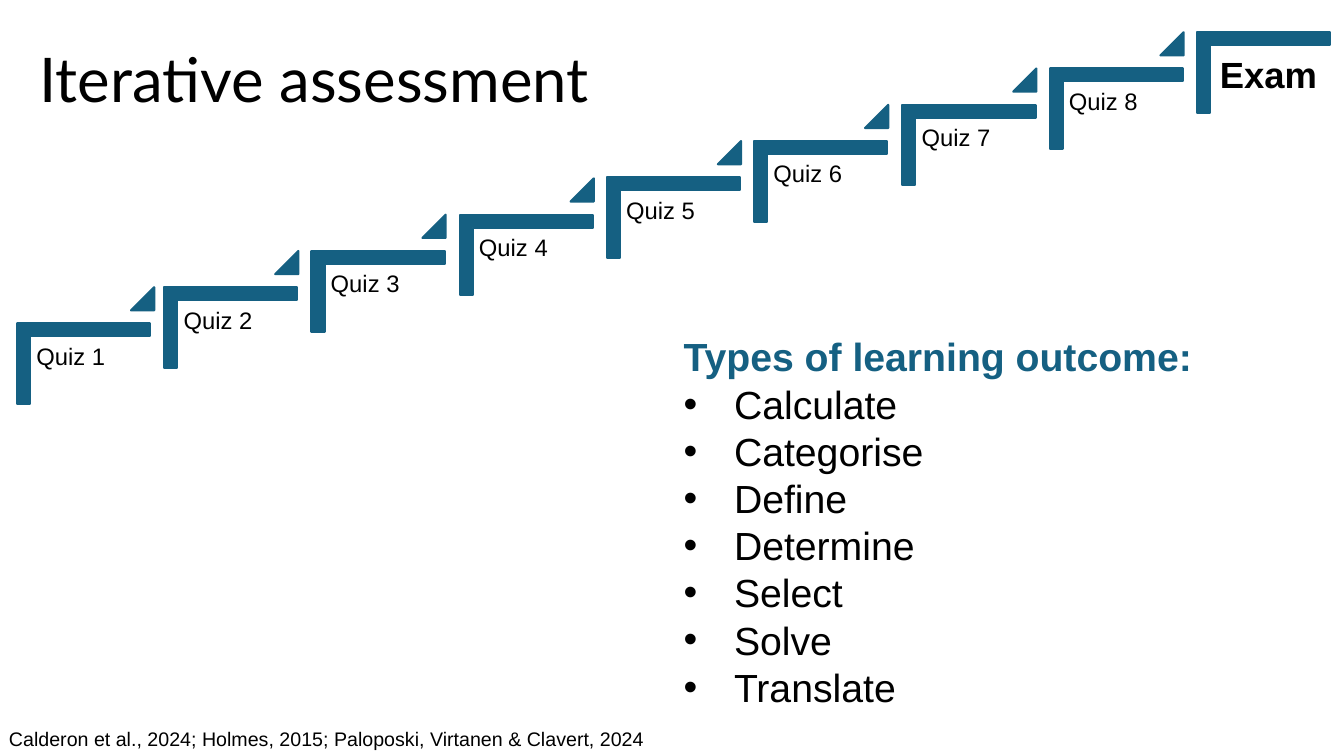
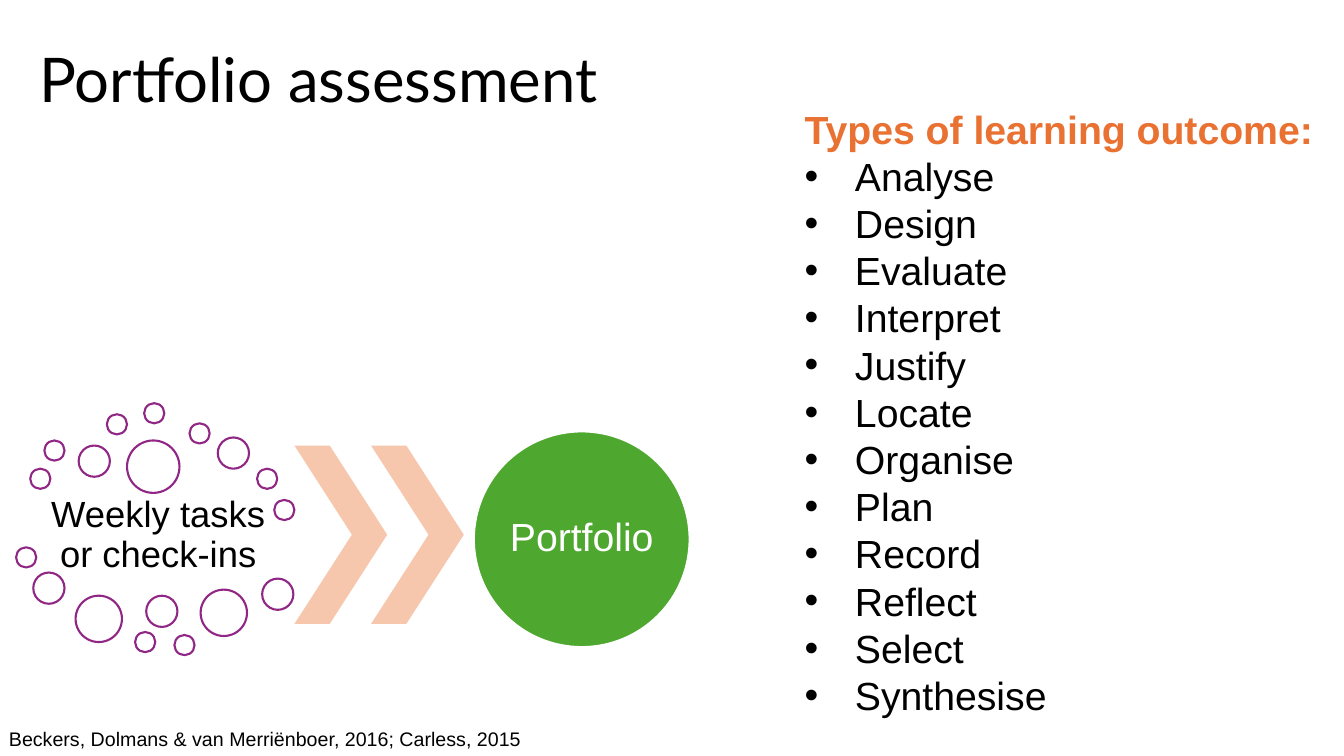
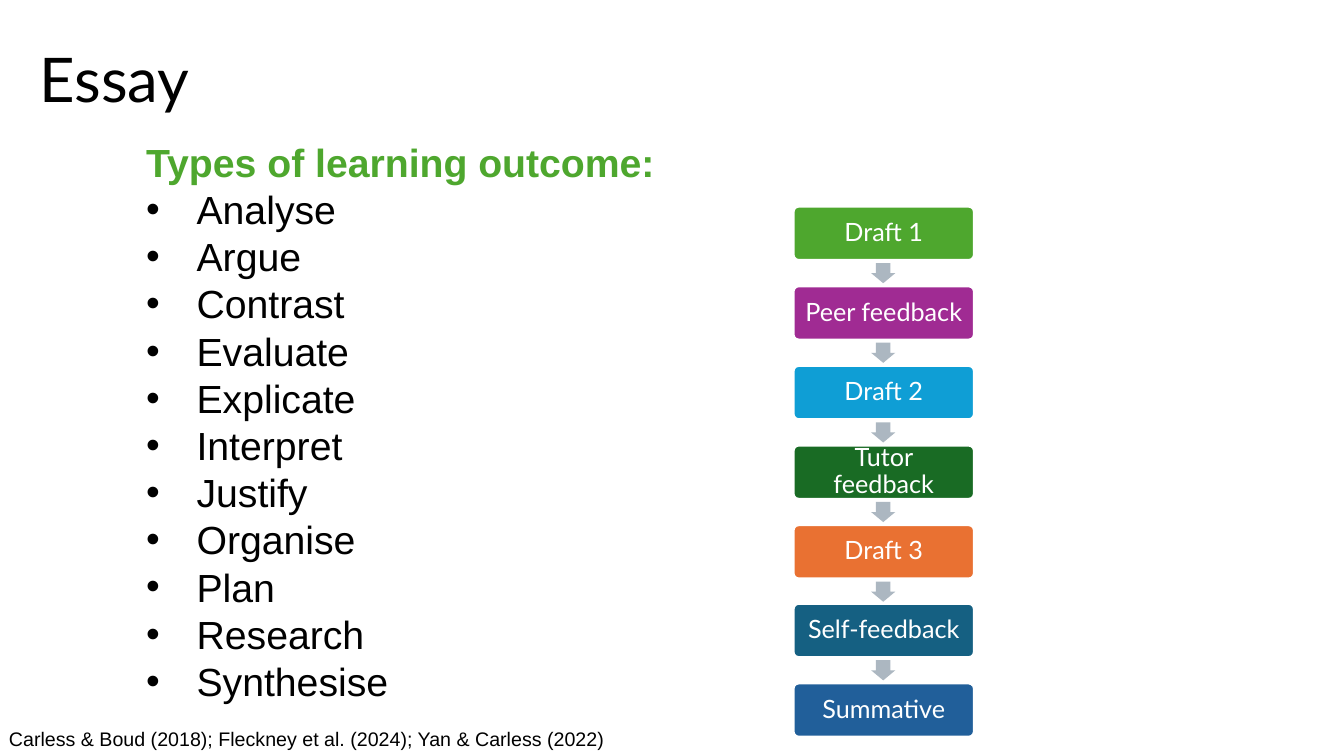
"""Three slides on types of assessment and the learning outcomes they suit."""
from pptx import Presentation
from pptx.dml.color import RGBColor
from pptx.enum.shapes import MSO_SHAPE
from pptx.enum.text import MSO_ANCHOR, MSO_AUTO_SIZE, PP_ALIGN
from pptx.util import Emu, Pt

PX = 9144
BLACK = RGBColor(0x00, 0x00, 0x00)
WHITE = RGBColor(0xFF, 0xFF, 0xFF)
TEAL = RGBColor(0x15, 0x60, 0x82)
ORANGE = RGBColor(0xE9, 0x71, 0x32)
PEACH = RGBColor(0xF6, 0xC6, 0xAD)
GREEN = RGBColor(0x4E, 0xA7, 0x2E)
DARK_GREEN = RGBColor(0x19, 0x6B, 0x24)
PURPLE = RGBColor(0xA0, 0x2B, 0x93)
PLUM = RGBColor(0x91, 0x27, 0x85)
SKY = RGBColor(0x0F, 0x9E, 0xD5)
BLUE = RGBColor(0x21, 0x5F, 0x9A)
GREY = RGBColor(0xAC, 0xB7, 0xC1)

SLIDES = [
    ("Iterative assessment", TEAL, (668, 325, 582, 387),
     ["Calculate", "Categorise", "Define", "Determine", "Select", "Solve", "Translate"],
     "Calderon et al., 2024; Holmes, 2015; Paloposki, Virtanen & Clavert, 2024"),
    ("Portfolio assessment", ORANGE, (788, 99, 531, 623),
     ["Analyse", "Design", "Evaluate", "Interpret", "Justify", "Locate", "Organise",
      "Plan", "Record", "Reflect", "Select", "Synthesise"],
     "Beckers, Dolmans & van Merriënboer, 2016; Carless, 2015"),
    ("Essay", GREEN, (135, 132, 531, 576),
     ["Analyse", "Argue", "Contrast", "Evaluate", "Explicate", "Interpret", "Justify",
      "Organise", "Plan", "Research", "Synthesise"],
     "Carless & Boud (2018); Fleckney et al. (2024); Yan & Carless (2022)"),
]


def add_figure(page, kind, box, fill, line=None, adjustments=()):
    """Add a flat preset shape."""
    shape = page.shapes.add_shape(kind, *[Emu(length * PX) for length in box])
    shape.shadow.inherit = False
    shape.fill.solid()
    shape.fill.fore_color.rgb = fill
    if line is None:
        shape.line.fill.background()
    else:
        shape.line.color.rgb = line
        shape.line.width = Pt(1.5)
    for index, value in enumerate(adjustments):
        shape.adjustments[index] = value
    return shape


def write(shape, text, size, color=BLACK, font="Arial", bold=False, align=PP_ALIGN.LEFT,
          anchor=MSO_ANCHOR.TOP, spacing=0.9, margins=(10, 5)):
    """Write one formatted paragraph into a shape and return it."""
    frame = shape.text_frame
    frame.word_wrap = True
    frame.auto_size = MSO_AUTO_SIZE.NONE
    frame.vertical_anchor = anchor
    frame.margin_left = frame.margin_right = Emu(margins[0] * PX)
    frame.margin_top = frame.margin_bottom = Emu(margins[1] * PX)
    para = frame.add_paragraph() if frame.text else frame.paragraphs[0]
    para.alignment = align
    para.line_spacing = spacing
    para.space_before = Pt(0)
    span = para.add_run()
    span.text = text
    span.font.name = font
    span.font.size = Pt(size)
    span.font.bold = bold
    span.font.color.rgb = color
    return para


deck = Presentation()
deck.slide_width = Emu(1333 * PX)
deck.slide_height = Emu(750 * PX)
pages = []

for heading, accent, list_box, outcomes, sources in SLIDES:
    page = deck.slides.add_slide(deck.slide_layouts[1])
    pages.append(page)
    title, body = page.placeholders
    for holder, box in ((title, (29, 9, 1011, 145)), (body, list_box)):
        holder.left, holder.top, holder.width, holder.height = [Emu(length * PX) for length in box]
    write(title, heading, 44, font="Lato", anchor=MSO_ANCHOR.MIDDLE)
    para = write(body, "Types of learning outcome:", 28, accent, bold=True, spacing=Pt(33.7))
    properties = para._p.get_or_add_pPr()
    properties.set("marL", "0")
    properties.set("indent", "0")
    properties.append(properties.makeelement(
        "{http://schemas.openxmlformats.org/drawingml/2006/main}buNone", {}))
    for outcome in outcomes:
        para = write(body, outcome, 28, spacing=Pt(33.7))
        para._p.get_or_add_pPr().set("marL", str(50 * PX))
        para._p.get_or_add_pPr().set("indent", str(-50 * PX))
    footer = page.shapes.add_textbox(*[Emu(length * PX) for length in (-1, 716, 668, 34)])
    write(footer, sources, 14, spacing=Pt(16.8))

quiz_page, portfolio_page, essay_page = pages

for step in range(9):
    left = 43 + round(146.25 * step)
    top = 295 - round(36.13 * step)
    stair = add_figure(quiz_page, MSO_SHAPE.CORNER, (left, top, 80, 132), TEAL, TEAL, (0.16, 0.16))
    stair.rotation = 90
    label = quiz_page.shapes.add_textbox(
        *[Emu(length * PX) for length in (left - 14, top + 40, 119, 105)])
    if step < 8:
        write(label, f"Quiz {step + 1}", 17, margins=(7, 7))
        nudge = 3 if step == 0 else 0
        add_figure(quiz_page, MSO_SHAPE.ISOSCELES_TRIANGLE,
                   (left + 84 + nudge, top - 10, 23, 23), TEAL, TEAL, (1,))
    else:
        write(label, "Exam", 26, bold=True, margins=(11, 11))

tasks = portfolio_page.shapes.add_textbox(*[Emu(length * PX) for length in (31, 490, 252, 83)])
write(tasks, "Weekly tasks or check-ins", 26, align=PP_ALIGN.CENTER,
      anchor=MSO_ANCHOR.MIDDLE, margins=(4, 4))
BUBBLES = {
    20: [(30, 465), (44, 437), (106, 411), (143, 400), (188, 420), (255, 465), (272, 496),
         (16, 543), (134, 627), (173, 630)],
    31: [(78, 442), (216, 434), (33, 568), (145, 591), (260, 574)],
    46: [(75, 591), (199, 585)],
    52: [(126, 437)],
}
for diameter, corners in BUBBLES.items():
    for left, top in corners:
        add_figure(portfolio_page, MSO_SHAPE.OVAL, (left, top, diameter, diameter), WHITE, PLUM)
for left in (292, 368):
    add_figure(portfolio_page, MSO_SHAPE.CHEVRON, (left, 442, 92, 177), PEACH, adjustments=(0.62,))
portfolio = add_figure(portfolio_page, MSO_SHAPE.OVAL, (470, 428, 214, 214), GREEN, WHITE)
write(portfolio, "Portfolio", 28, WHITE, align=PP_ALIGN.CENTER,
      anchor=MSO_ANCHOR.MIDDLE, margins=(0, 0))

STAGES = [("Draft 1", GREEN), ("Peer feedback", PURPLE), ("Draft 2", SKY),
          ("Tutor feedback", DARK_GREEN), ("Draft 3", ORANGE), ("Self-feedback", TEAL),
          ("Summative", BLUE)]
for step, (name, color) in enumerate(STAGES):
    top = 205 + round(78.9 * step)
    stage = add_figure(essay_page, MSO_SHAPE.ROUNDED_RECTANGLE, (787, top, 179, 53),
                       color, WHITE, (0.1,))
    write(stage, name, 18, WHITE, "Lato", align=PP_ALIGN.CENTER,
          anchor=MSO_ANCHOR.MIDDLE, margins=(7, 7))
    if step < len(STAGES) - 1:
        add_figure(essay_page, MSO_SHAPE.DOWN_ARROW, (864, top + 56, 24, 20), GREY,
                   adjustments=(0.6, 0.5))

deck.save("out.pptx")
